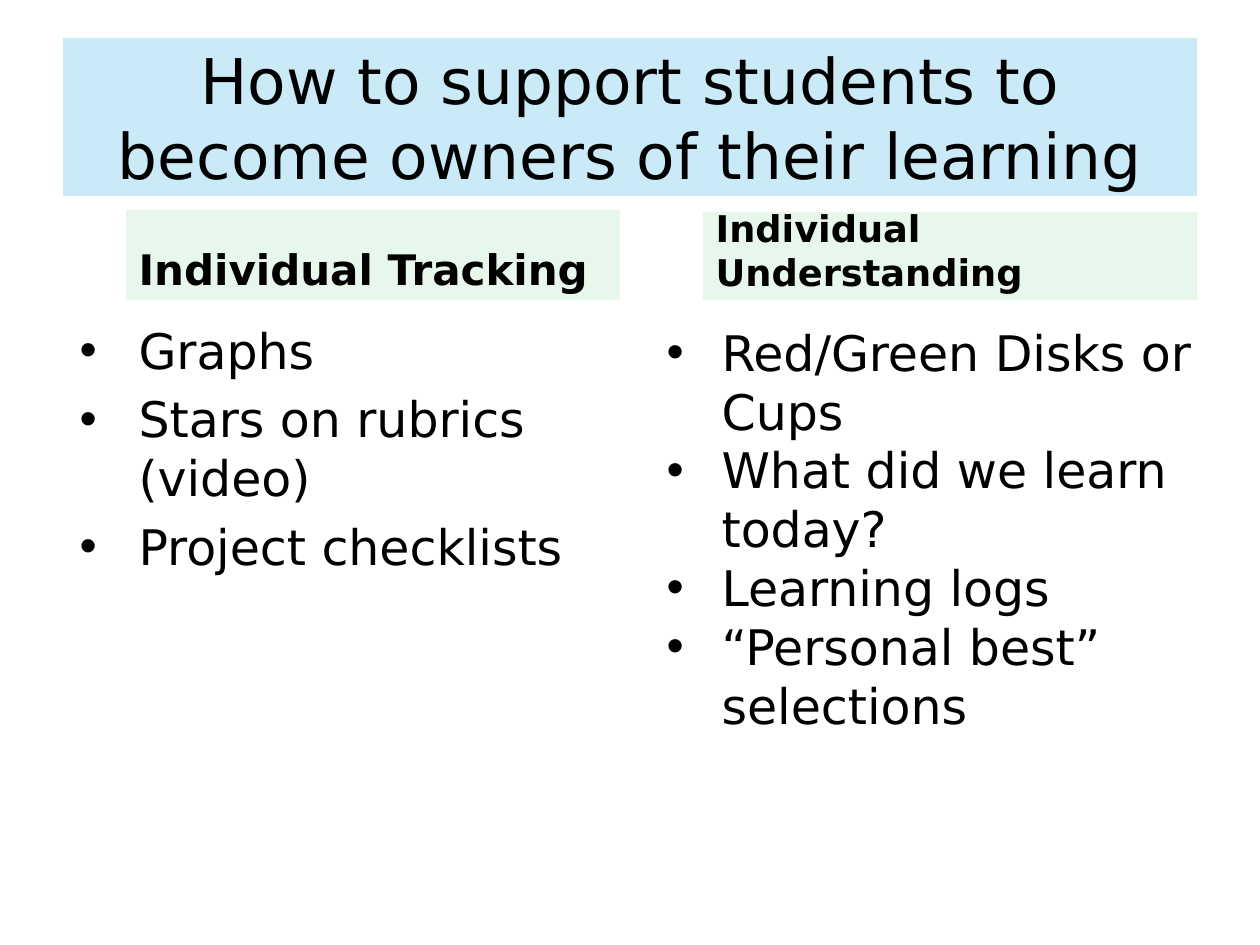
from dataclasses import dataclass, field
from typing import Any

from lxml.etree import SubElement as Sub
from pptx import Presentation as Deck
from pptx.dml.color import RGBColor
from pptx.enum.text import MSO_ANCHOR as Anchor, MSO_AUTO_SIZE as Fit, PP_ALIGN as Align
from pptx.oxml.ns import qn
from pptx.util import Emu, Pt

SCALE = 914400 / 126
BLACK = RGBColor(0x00, 0x00, 0x00)
SKY = RGBColor(0xA9, 0xDC, 0xF2)
MINT = RGBColor(0xE8, 0xF7, 0xEB)
FACE = "DejaVu Sans"


@dataclass(frozen=True)
class Block:
    """One placeholder with its box, text and format values."""
    slot: int
    box: tuple[int, int, int, int]
    lines: list[str]
    size: int
    gaps: list[float]
    bold: bool = False
    fill: RGBColor | None = None
    alpha: int = 100
    hang: tuple[int, int] = (0, 0)
    frame: dict[str, Any] = field(default_factory=dict)
    align: Align = Align.LEFT


def px(n: int) -> Emu:
    """Turn pixels into EMU."""
    return Emu(round(n * SCALE))


def put(item: Any, values: dict[str, Any]) -> None:
    """Set each named value on the item."""
    for name, value in values.items():
        setattr(item, name, value)


def paint(shape: Any, block: Block) -> None:
    """Fill the shape, with transparency if asked for."""
    if block.fill is None:
        return
    shape.fill.solid()
    shape.fill.fore_color.rgb = block.fill
    if block.alpha < 100:
        tint = shape.fill._xPr.find(".//" + qn("a:srgbClr"))
        Sub(tint, qn("a:alpha")).set("val", str(block.alpha * 1000))


def draw(slide: Any, block: Block) -> None:
    """Place, fill and write one placeholder."""
    shape = slide.placeholders[block.slot]
    put(shape, dict(zip(("left", "top", "width", "height"), map(px, block.box))))
    paint(shape, block)
    frame = shape.text_frame
    frame.text = "\n".join(block.lines)
    put(frame, {"word_wrap": True, "auto_size": Fit.NONE,
                "vertical_anchor": Anchor.TOP} | block.frame)
    for para, gap in zip(frame.paragraphs, block.gaps):
        put(para, {"alignment": block.align, "space_before": Pt(gap)})
        props = para._p.get_or_add_pPr()
        for key, dent in zip(("marL", "indent"), block.hang):
            props.set(key, str(px(dent)))
        font = para.runs[0].font
        put(font, {"name": FACE, "size": Pt(block.size), "bold": block.bold})
        font.color.rgb = BLACK


LOW = {"vertical_anchor": Anchor.BOTTOM}
BLOCKS = [
    Block(0, (63, 38, 1134, 158),
          ["How to support students to become owners of their learning"],
          36, [0], fill=SKY, alpha=60, align=Align.CENTER,
          frame={"vertical_anchor": Anchor.MIDDLE}),
    Block(1, (126, 210, 494, 90), ["Individual Tracking"], 24, [4.2],
          bold=True, fill=MINT, hang=(32, -32), frame=LOW),
    Block(2, (63, 314, 557, 544),
          ["Graphs", "Stars on rubrics (video)", "Project checklists"],
          28, [5.6] * 3, hang=(63, -59)),
    Block(3, (703, 212, 494, 88), ["Individual Understanding"], 21, [4.2],
          bold=True, fill=MINT, frame=LOW),
    Block(4, (646, 316, 606, 679),
          ["Red/Green Disks or Cups", "What did we learn today?",
           "Learning logs", "“Personal best” selections"],
          28, [5.6, 0, 0, 0], hang=(63, -55)),
]


def main() -> None:
    """Build the slide and save it."""
    deck = Deck()
    put(deck, {"slide_width": px(1260), "slide_height": px(945)})
    slide = deck.slides.add_slide(deck.slide_layouts[4])
    for block in BLOCKS:
        draw(slide, block)
    deck.save("out.pptx")


if __name__ == "__main__":
    main()
